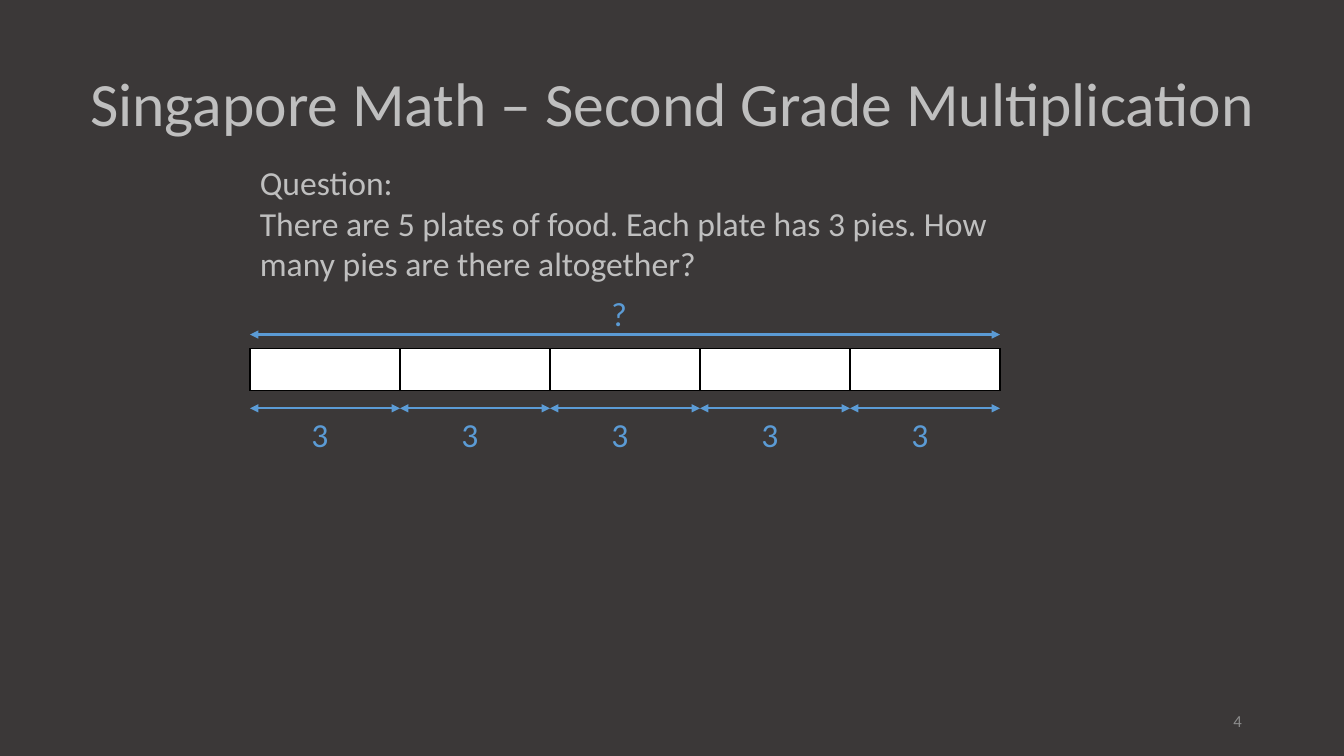
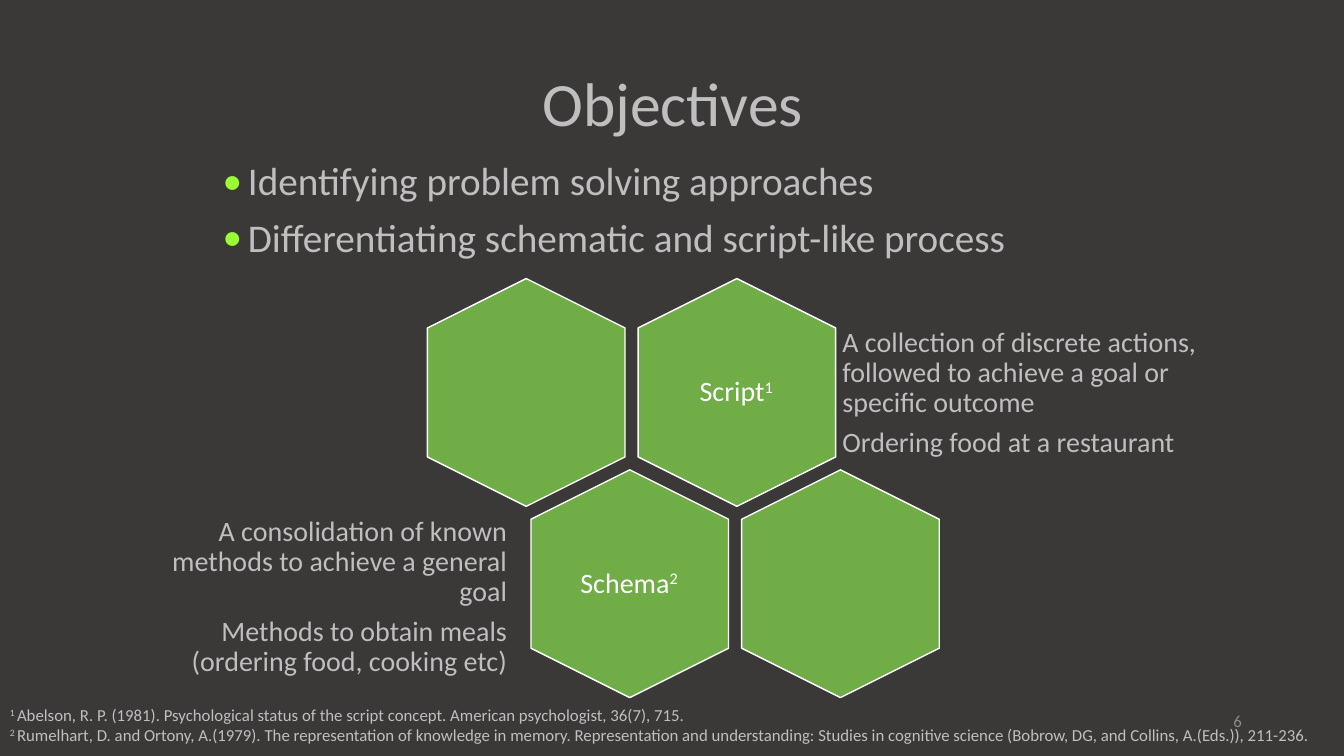
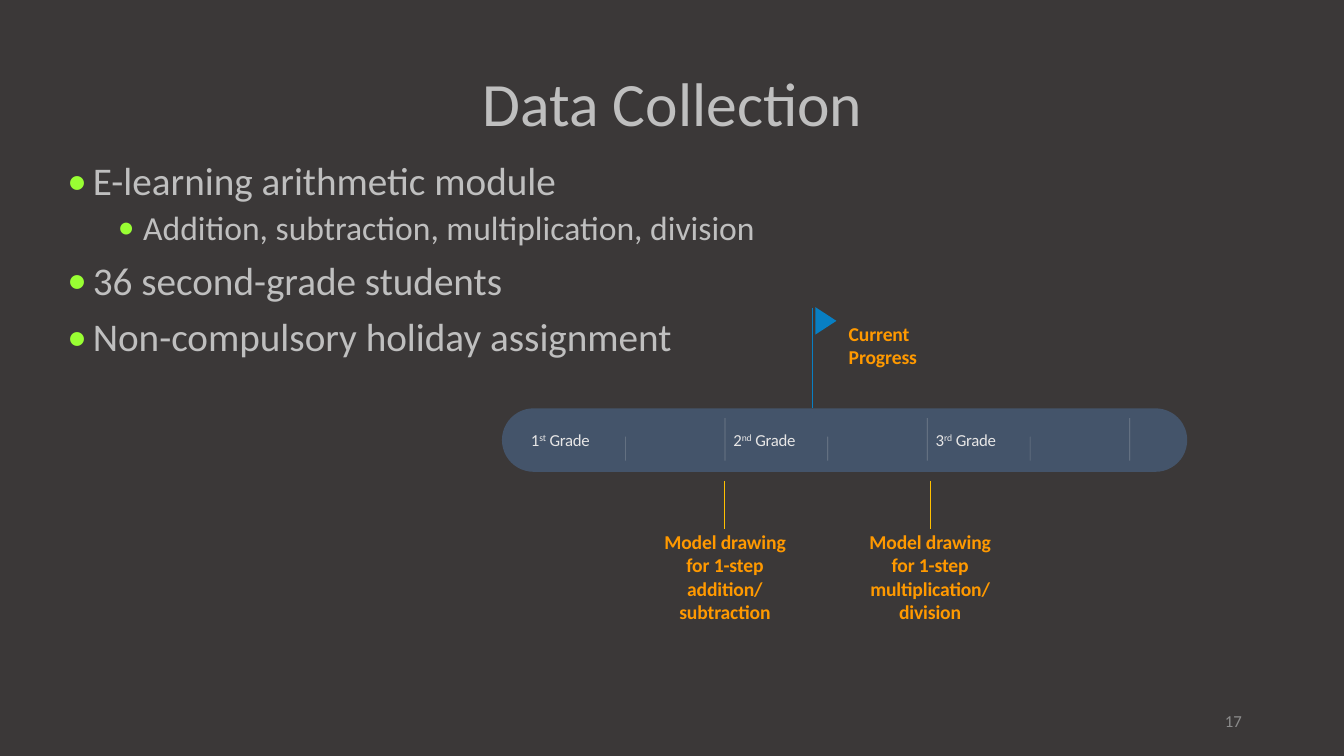
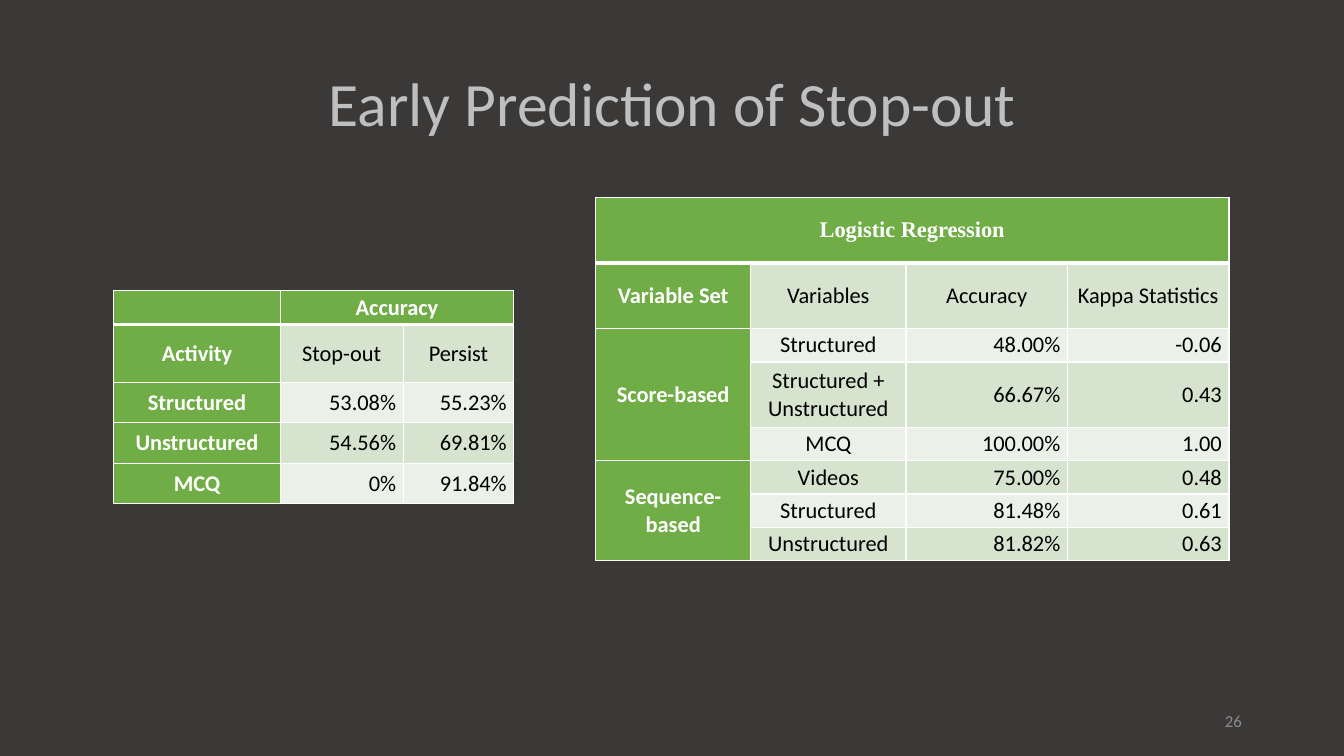
from dataclasses import dataclass, replace
from typing import Any, NamedTuple

from lxml.etree import SubElement
from pptx import Presentation
from pptx.dml.color import RGBColor
from pptx.enum.shapes import MSO_CONNECTOR, MSO_SHAPE
from pptx.enum.text import MSO_ANCHOR as Anchor, PP_ALIGN as Align
from pptx.oxml.ns import qn
from pptx.slide import Slide
from pptx.util import Cm, Pt

COLORS = {
    "background": "3B3838", "text": "BFBFBF", "page": "8C8C8C",
    "white": "FFFFFF", "black": "000000", "bullet": "99FF33",
    "measure": "5B9BD5", "green": "70AD47", "band_dark": "D5E3CF",
    "band_light": "EBF1E9", "timeline": "44546A", "tick": "E7E6E6",
    "flag": "087FC3", "milestone": "FF9900", "pointer": "FFC000",
}


# Descriptions of repeated elements
class Box(NamedTuple):
    left: float
    top: float
    width: float
    height: float


@dataclass(frozen=True)
class Style:
    size: int = 24
    color: str = "text"
    bold: bool = False
    font: str = "Calibri"
    align: Any = Align.LEFT
    line: float = 1.0
    before: int = 0
    after: int = 0
    tracking: int = 0


@dataclass(frozen=True)
class Stroke:
    color: str
    width: float
    arrows: bool = False
    opacity: int = 100


@dataclass(frozen=True)
class GridSpec:
    left: float
    top: float
    widths: list[float]
    heights: list[float]
    rows: list[list[str]]
    merges: list[tuple[int, int, int, int]]
    first_number_column: int
    header_font: str = "Calibri"


TITLE = Style(44, align=Align.CENTER, line=0.9)
PAGE = Style(12, "page", align=Align.RIGHT)
BULLET = Style(28, line=0.9, before=10)
SUB_BULLET = Style(24, line=0.9, before=5)
MEASURE = Style(24, "measure")
NOTE = Style(20, line=0.9, after=7)
GRADE = Style(12, "tick", tracking=-20)
MILESTONE = Style(14, "milestone", bold=True, tracking=-10)
HEADER = Style(16, "white", bold=True, align=Align.CENTER)
DOUBLE_ARROW = Stroke("measure", 1.5, arrows=True)
TICK = Stroke("tick", 0.5, opacity=30)
POINTER = Stroke("pointer", 0.75)


# Shared helpers
def rgb(name: str) -> RGBColor:
    return RGBColor.from_string(COLORS[name])


def lengths(box: Box) -> list[Cm]:
    return [Cm(value) for value in box]


def set_values(target: Any, values: dict[str, Any]) -> None:
    for name, value in values.items():
        setattr(target, name, value)


def write_run(paragraph: Any, text: str, style: Style, raised: bool) -> None:
    run = paragraph.add_run()
    run.text = text
    set_values(run.font, {"name": style.font, "size": Pt(style.size),
                          "bold": style.bold})
    run.font.color.rgb = rgb(style.color)
    properties = run.font._element
    if raised:
        properties.set("baseline", "30000")
    if style.tracking:
        properties.set("spc", str(style.tracking))


def write(paragraph: Any, text: str, style: Style, first: bool = True) -> None:
    """Write text in which ^...^ is a superscript and \\n a line break."""
    set_values(paragraph, {
        "alignment": style.align, "line_spacing": style.line,
        "space_before": Pt(0 if first else style.before),
        "space_after": Pt(style.after),
    })
    for number, line in enumerate(text.split("\n")):
        if number:
            paragraph.add_line_break()
            SubElement(paragraph._p[-1], qn("a:rPr"),
                       sz=str(style.size * 100))
        for index, piece in enumerate(line.split("^")):
            if piece:
                write_run(paragraph, piece, style, raised=index % 2 == 1)


def add_text(slide: Slide, box: Box, texts: list[str], style: Style,
             anchor: Any = Anchor.TOP, inset: float | None = None) -> None:
    frame = slide.shapes.add_textbox(*lengths(box)).text_frame
    set_values(frame, {"word_wrap": True, "vertical_anchor": anchor})
    if inset is not None:
        sides = ("left", "top", "right", "bottom")
        set_values(frame, {f"margin_{side}": Cm(inset) for side in sides})
    for index, text in enumerate(texts):
        paragraph = frame.add_paragraph() if index else frame.paragraphs[0]
        write(paragraph, text, style, first=index == 0)


def add_bullets(slide: Slide, box: Box, items: list[tuple[str, int]]) -> None:
    frame = slide.shapes.add_textbox(*lengths(box)).text_frame
    frame.word_wrap = True
    for index, (text, level) in enumerate(items):
        paragraph = frame.add_paragraph() if index else frame.paragraphs[0]
        paragraph.level = level
        properties = paragraph._p.get_or_add_pPr()
        properties.set("marL", str(Cm(0.64 + 1.27 * level)))
        properties.set("indent", str(Cm(-0.64)))
        color = SubElement(properties, qn("a:buClr"))
        SubElement(color, qn("a:srgbClr"), val=COLORS["bullet"])
        SubElement(properties, qn("a:buFont"), typeface=BULLET.font)
        SubElement(properties, qn("a:buChar"), char="•")
        write(paragraph, text, SUB_BULLET if level else BULLET, index == 0)


def add_line(slide: Slide, start: tuple[float, float],
             end: tuple[float, float], stroke: Stroke) -> None:
    line = slide.shapes.add_connector(
        MSO_CONNECTOR.STRAIGHT, *[Cm(value) for value in (*start, *end)])
    line.line.width = Pt(stroke.width)
    line.line.color.rgb = rgb(stroke.color)
    properties = line._element.spPr
    outline = properties.find(qn("a:ln"))
    if stroke.opacity < 100:
        color = outline.find(".//" + qn("a:srgbClr"))
        SubElement(color, qn("a:alpha"), val=str(stroke.opacity * 1000))
    if stroke.arrows:
        for tag in ("a:headEnd", "a:tailEnd"):
            SubElement(outline, qn(tag), type="triangle")
    SubElement(properties, qn("a:effectLst"))


def add_preset(slide: Slide, kind: Any, box: Box, fill: str,
               outline: str | None = None, rotation: int = 0) -> Any:
    preset = slide.shapes.add_shape(kind, *lengths(box))
    preset.shadow.inherit = False
    preset.rotation = rotation
    preset.fill.solid()
    preset.fill.fore_color.rgb = rgb(fill)
    if outline:
        preset.line.color.rgb = rgb(outline)
        preset.line.width = Pt(1)
    else:
        preset.line.fill.background()
    return preset


def new_grid(slide: Slide, left: float, top: float, widths: list[float],
             heights: list[float]) -> Any:
    box = Box(left, top, sum(widths), sum(heights))
    grid = slide.shapes.add_table(len(heights), len(widths),
                                  *lengths(box)).table
    set_values(grid, {"first_row": False, "horz_banding": False})
    for column, width in zip(grid.columns, widths):
        column.width = Cm(width)
    for row, height in zip(grid.rows, heights):
        row.height = Cm(height)
    return grid


def format_cell(cell: Any, fill: str, border: str, top: int = 1,
                bottom: int = 1) -> None:
    set_values(cell, {
        "margin_left": Cm(0.18), "margin_right": Cm(0.18), "margin_top": 0,
        "margin_bottom": 0, "vertical_anchor": Anchor.MIDDLE,
    })
    properties = cell._tc.get_or_add_tcPr()
    for side, width in {"L": 1, "R": 1, "T": top, "B": bottom}.items():
        edge = SubElement(properties, qn(f"a:ln{side}"), w=str(Pt(width)))
        paint = SubElement(edge, qn("a:solidFill"))
        SubElement(paint, qn("a:srgbClr"), val=COLORS[border])
    cell.fill.solid()
    cell.fill.fore_color.rgb = rgb(fill)


def add_data_table(slide: Slide, spec: GridSpec) -> None:
    grid = new_grid(slide, spec.left, spec.top, spec.widths, spec.heights)
    for row, texts in enumerate(spec.rows):
        for column, text in enumerate(texts):
            cell = grid.cell(row, column)
            if row == 0 or column == 0:
                fill = "green"
                font = "Calibri" if row else spec.header_font
                style = replace(HEADER, font=font)
            else:
                fill = "band_dark" if row % 2 else "band_light"
                number = row > 1 and column >= spec.first_number_column
                style = Style(16, "black",
                              align=Align.RIGHT if number else Align.CENTER)
            format_cell(cell, fill, "white", top=3 if row == 1 else 1,
                        bottom=1 if row else 3)
            write(cell.text_frame.paragraphs[0], text, style)
    for top, left, bottom, right in spec.merges:
        grid.cell(top, left).merge(grid.cell(bottom, right))


def add_titled_slide(prs: Any, heading: str, page: int) -> Slide:
    slide = prs.slides.add_slide(prs.slide_layouts[5])
    title = slide.shapes.title
    box = lengths(Box(1.45, 1.4, 31.01, 2.57))
    set_values(title, dict(zip(("left", "top", "width", "height"), box)))
    title.text_frame.vertical_anchor = Anchor.MIDDLE
    write(title.text_frame.paragraphs[0], heading, TITLE)
    add_text(slide, Box(23.93, 17.65, 7.62, 1.02), [str(page)], PAGE,
             Anchor.MIDDLE)
    return slide


# Slides
def build_multiplication(prs: Any) -> None:
    slide = add_titled_slide(
        prs, "Singapore Math – Second Grade Multiplication", 4)
    add_text(slide, Box(6.3, 3.96, 20.52, 3.33), [
        "Question:",
        "There are 5 plates of food. Each plate has 3 pies. "
        "How many pies are there altogether?",
    ], Style())

    # Bar model: one cell for each plate
    plates, left, plate_width = 5, 6.3, 3.78
    bar = new_grid(slide, left, 8.79, [plate_width] * plates, [1.04])
    for plate in range(plates):
        format_cell(bar.cell(0, plate), "white", "black")
        start = left + plate * plate_width
        add_line(slide, (start, 10.29), (start + plate_width, 10.29),
                 DOUBLE_ARROW)
        add_text(slide, Box(start + 1.3, 10.31, 1.17, 1.27), ["3"], MEASURE)
    add_line(slide, (left, 8.43), (left + plates * plate_width, 8.43),
             DOUBLE_ARROW)
    add_text(slide, Box(15.16, 7.26, 1.17, 1.27), ["?"], MEASURE)


def build_objectives(prs: Any) -> None:
    slide = add_titled_slide(prs, "Objectives", 6)
    add_bullets(slide, Box(5.36, 3.96, 23.93, 8.92), [
        ("Identifying problem solving approaches", 0),
        ("Differentiating schematic and script-like process", 0),
    ])

    # Honeycomb
    rows = [(10.39, 7.4, ["", "Script^1^"]), (13.0, 12.22, ["Schema^2^", ""])]
    label = replace(NOTE, color="white", align=Align.CENTER)
    for row_left, top, concepts in rows:
        for index, concept in enumerate(concepts):
            left = row_left + index * 5.31
            hexagon = add_preset(slide, MSO_SHAPE.HEXAGON,
                                 Box(left, top, 5.74, 4.98), "green",
                                 outline="white", rotation=90)
            hexagon.adjustments[0] = 0.25
            if concept:
                add_text(slide, Box(left + 1.14, top + 0.53, 3.43, 3.94),
                         [concept], label, Anchor.MIDDLE, 0.2)

    # Definitions beside the cells
    add_text(slide, Box(21.03, 8.2, 10.03, 3.43), [
        "A collection of discrete actions, followed to achieve a goal or "
        "specific outcome",
        "Ordering food at a restaurant",
    ], NOTE, Anchor.MIDDLE, 0.2)
    add_text(slide, Box(3.56, 13.34, 9.42, 3.43), [
        "A consolidation of known methods to achieve a general goal",
        "Methods to obtain meals (ordering food, cooking etc)",
    ], replace(NOTE, align=Align.RIGHT), Anchor.MIDDLE, 0.2)

    # References
    add_text(slide, Box(0, 17.63, 33.87, 1.27), [
        "^1 ^Abelson, R. P. (1981). Psychological status of the script "
        "concept. American psychologist, 36(7), 715.",
        "^2 ^Rumelhart, D. and Ortony, A.(1979). The representation of "
        "knowledge in memory. Representation and understanding: Studies in "
        "cognitive science (Bobrow, DG, and Collins, A.(Eds.)), 211-236.",
    ], Style(12))


def build_data_collection(prs: Any) -> None:
    slide = add_titled_slide(prs, "Data Collection", 17)
    add_bullets(slide, Box(1.45, 3.96, 32.4, 15.05), [
        ("E-learning arithmetic module", 0),
        ("Addition, subtraction, multiplication, division", 1),
        ("36 second-grade students", 0),
        ("Non-compulsory holiday assignment", 0),
    ])

    # Timeline with half-grade and full-grade ticks
    band = add_preset(slide, MSO_SHAPE.ROUNDED_RECTANGLE,
                      Box(12.65, 10.29, 17.27, 1.6), "timeline")
    band.adjustments[0] = 0.5
    for index, grade in enumerate(["1^st^ Grade", "2^nd^ Grade",
                                   "3^rd^ Grade"]):
        offset = index * 5.1
        add_text(slide, Box(13.38 + offset, 10.69, 2.2, 0.79), [grade],
                 GRADE, Anchor.MIDDLE, 0)
        for tick, top in ((15.76, 11.0), (18.27, 10.54)):
            add_line(slide, (tick + offset, top), (tick + offset, 11.61),
                     TICK)

    # Milestones below
    milestones = [
        (18.27, "Model drawing for 1-step addition/\nsubtraction"),
        (23.44, "Model drawing for 1-step multiplication/division"),
    ]
    for center, milestone in milestones:
        add_line(slide, (center, 12.12), (center, 13.34), POINTER)
        add_text(slide, Box(center - 1.6, 13.34, 3.2, 2.39), [milestone],
                 replace(MILESTONE, align=Align.CENTER), Anchor.MIDDLE, 0)

    # Progress flag
    add_line(slide, (20.47, 7.75), (20.47, 10.29), Stroke("flag", 0.75))
    add_preset(slide, MSO_SHAPE.FLOWCHART_MERGE, Box(20.47, 7.82, 0.69, 0.53),
               "flag", rotation=270)
    add_text(slide, Box(21.39, 8.1, 2.03, 1.19), ["Current Progress"],
             MILESTONE, Anchor.MIDDLE, 0)


def build_prediction(prs: Any) -> None:
    slide = add_titled_slide(prs, "Early Prediction of Stop-out", 26)
    activity_accuracy = GridSpec(
        2.87, 7.32, [4.19, 3.1, 2.79], [0.86, 1.45, 1.02, 1.02, 1.02],
        rows=[
            ["", "Accuracy", ""],
            ["Activity", "Stop-out", "Persist"],
            ["Structured", "53.08%", "55.23%"],
            ["Unstructured", "54.56%", "69.81%"],
            ["MCQ", "0%", "91.84%"],
        ],
        merges=[(0, 1, 0, 2)], first_number_column=1)
    regression = GridSpec(
        15.01, 4.98, [3.91, 3.91, 4.07, 4.07],
        [1.65, 1.65, 0.84, 1.65, 0.84, 0.84, 0.84, 0.84],
        rows=[
            ["Logistic Regression", "", "", ""],
            ["Variable Set", "Variables", "Accuracy", "Kappa Statistics"],
            ["Score-based", "Structured", "48.00%", "-0.06"],
            ["", "Structured + Unstructured", "66.67%", "0.43"],
            ["", "MCQ", "100.00%", "1.00"],
            ["Sequence-based", "Videos", "75.00%", "0.48"],
            ["", "Structured", "81.48%", "0.61"],
            ["", "Unstructured", "81.82%", "0.63"],
        ],
        merges=[(0, 0, 0, 3), (2, 0, 4, 0), (5, 0, 7, 0)],
        first_number_column=2, header_font="Times New Roman")
    for spec in (activity_accuracy, regression):
        add_data_table(slide, spec)


def main() -> None:
    prs = Presentation()
    set_values(prs, {"slide_width": Cm(33.87), "slide_height": Cm(19.05)})
    background = prs.slide_master.background.fill
    background.solid()
    background.fore_color.rgb = rgb("background")
    for build in (build_multiplication, build_objectives,
                  build_data_collection, build_prediction):
        build(prs)
    prs.save("out.pptx")


if __name__ == "__main__":
    main()
